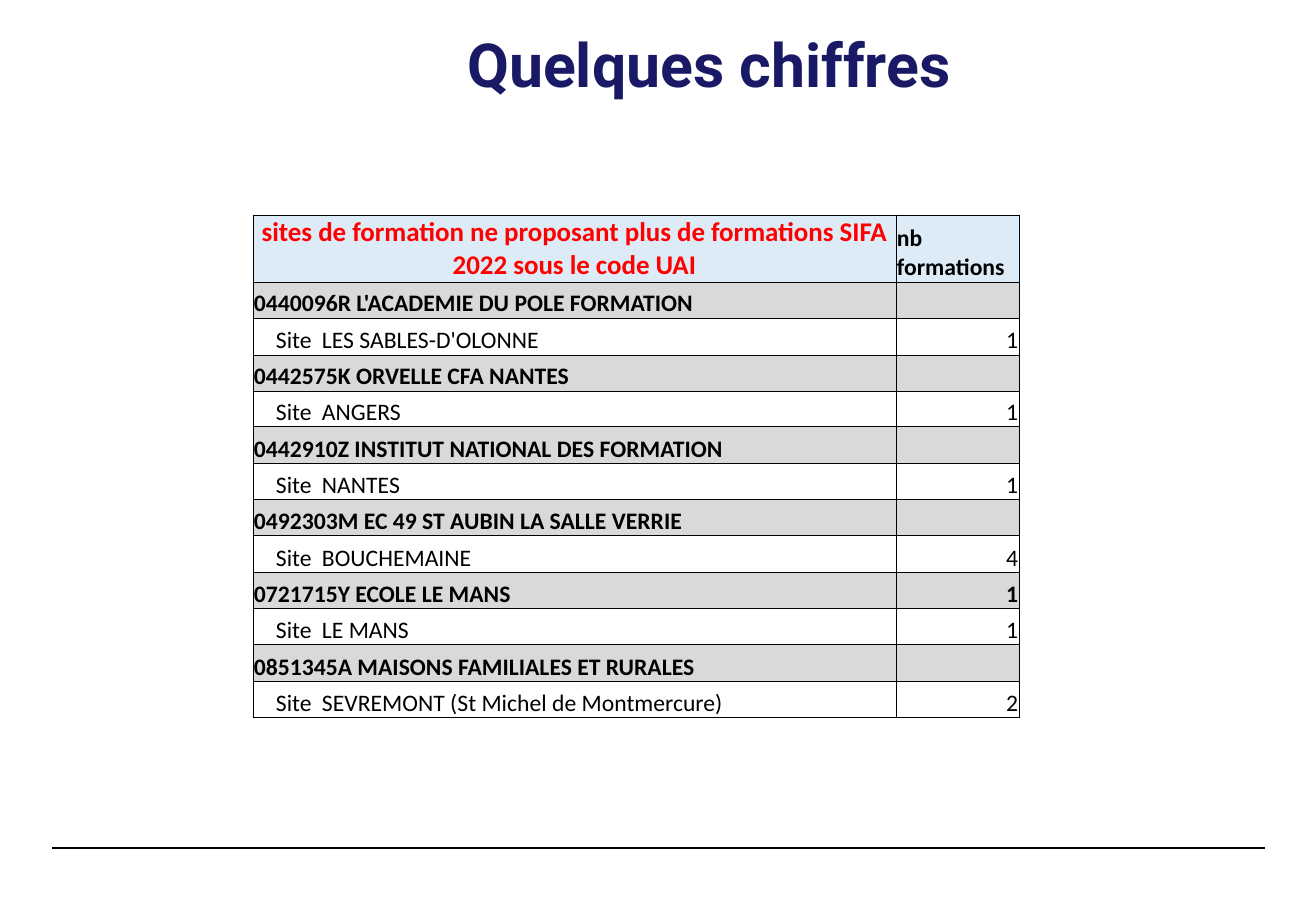
"""Build the slide "Quelques chiffres" with its table of training sites."""
from dataclasses import dataclass

from lxml import etree
from pptx import Presentation
from pptx.dml.color import RGBColor
from pptx.enum.shapes import MSO_CONNECTOR
from pptx.enum.text import MSO_ANCHOR, PP_ALIGN
from pptx.oxml.ns import qn
from pptx.util import Pt

STRAIGHT = MSO_CONNECTOR.STRAIGHT
TOP, BOTTOM = MSO_ANCHOR.TOP, MSO_ANCHOR.BOTTOM
LEFT, CENTER, RIGHT = PP_ALIGN.LEFT, PP_ALIGN.CENTER, PP_ALIGN.RIGHT
EMU_PER_PX = 7526


@dataclass(frozen=True)
class Theme:
    title_font: str = "Roboto"
    table_font: str = "Calibri"
    title_color: str = "191966"
    alert_color: str = "FF0000"
    ink: str = "000000"
    header_fill: str = "DDEBF7"
    group_fill: str = "D9D9D9"
    title_size: int = 36
    header_size: int = 16
    body_size: int = 14
    rule_width: float = 0.8
    border_width: float = 0.5


theme = Theme()


def px(length):
    return length * EMU_PER_PX


def add_run(paragraph, text, font, size, color, bold):
    run = paragraph.add_run()
    run.text = text
    run.font.name = font
    run.font.size = Pt(size)
    run.font.bold = bold
    run.font.color.rgb = RGBColor.from_string(color)


SITES = [
    ("0440096R L'ACADEMIE DU POLE FORMATION", "", "LES SABLES-D'OLONNE", "1"),
    ("0442575K ORVELLE CFA NANTES", "", "ANGERS", "1"),
    ("0442910Z INSTITUT NATIONAL DES FORMATION", "", "NANTES", "1"),
    ("0492303M EC 49 ST AUBIN LA SALLE VERRIE", "", "BOUCHEMAINE", "4"),
    ("0721715Y ECOLE LE MANS", "1", "LE MANS", "1"),
    ("0851345A MAISONS FAMILIALES ET RURALES", "", "SEVREMONT (St Michel de Montmercure)", "2"),
]
HEADER = ("sites de formation ne proposant plus de formations SIFA 2022 sous le code UAI", "nb formations")
COLUMN_WIDTHS = (643, 123)
HEADER_HEIGHT, BODY_HEIGHT = 67, 436
SITE_INDENT, SITE_TAB = 23, 46

presentation = Presentation()
presentation.slide_width = px(1316)
presentation.slide_height = px(911)
slide = presentation.slides.add_slide(presentation.slide_layouts[6])

footer_rule = slide.shapes.add_connector(STRAIGHT, px(52), px(848), px(1265), px(848))
footer_rule.line.color.rgb = RGBColor.from_string(theme.ink)
footer_rule.line.width = Pt(theme.rule_width)
etree.SubElement(footer_rule._element.spPr, qn("a:effectLst"))

title = slide.shapes.add_textbox(px(56), px(35), px(1306), px(143))
title_frame = title.text_frame
title_frame.word_wrap = True
title_frame.vertical_anchor = TOP
title_frame.margin_left = title_frame.margin_right = 0
title_frame.margin_top = title_frame.margin_bottom = 0
title_paragraph = title_frame.paragraphs[0]
title_paragraph.alignment = CENTER
title_paragraph.line_spacing = 0.9
add_run(title_paragraph, "Quelques chiffres", theme.title_font, theme.title_size, theme.title_color, True)

rows = [("header", HEADER)]
for group, group_count, site, site_count in SITES:
    rows.append(("group", (group, group_count)))
    rows.append(("site", (f"Site\t{site}", site_count)))
body_rows = len(rows) - 1
row_edges = [round(BODY_HEIGHT * index / body_rows) for index in range(body_rows + 1)]
row_heights = [HEADER_HEIGHT] + [end - start for start, end in zip(row_edges, row_edges[1:])]
fills = {"header": theme.header_fill, "group": theme.group_fill}

table = slide.shapes.add_table(
    len(rows), len(COLUMN_WIDTHS), px(253), px(215), px(sum(COLUMN_WIDTHS)), px(sum(row_heights))
).table
table.first_row = False
table.horz_banding = False
for column, width in zip(table.columns, COLUMN_WIDTHS):
    column.width = px(width)

for row_index, (kind, texts) in enumerate(rows):
    table.rows[row_index].height = px(row_heights[row_index])
    for column_index, text in enumerate(texts):
        cell = table.cell(row_index, column_index)
        is_site_name = kind == "site" and column_index == 0
        is_main_header = kind == "header" and column_index == 0
        cell.vertical_anchor = BOTTOM
        cell.margin_left = px(SITE_INDENT if is_site_name else 1)
        cell.margin_right = cell.margin_top = px(1)
        cell.margin_bottom = 0

        properties = cell._tc.get_or_add_tcPr()
        for side in ("a:lnL", "a:lnR", "a:lnT", "a:lnB"):
            border = etree.SubElement(properties, qn(side), w=str(Pt(theme.border_width)))
            border_fill = etree.SubElement(border, qn("a:solidFill"))
            etree.SubElement(border_fill, qn("a:srgbClr"), val=theme.ink)
        if kind in fills:
            cell.fill.solid()
            cell.fill.fore_color.rgb = RGBColor.from_string(fills[kind])
        else:
            cell.fill.background()

        paragraph = cell.text_frame.paragraphs[0]
        if is_main_header:
            paragraph.alignment = CENTER
        elif column_index == 1 and kind != "header":
            paragraph.alignment = RIGHT
        else:
            paragraph.alignment = LEFT
        if is_site_name:
            tabs = etree.SubElement(paragraph._p.get_or_add_pPr(), qn("a:tabLst"))
            etree.SubElement(tabs, qn("a:tab"), pos=str(px(SITE_TAB)), algn="l")
        if text:
            size = theme.header_size if is_main_header else theme.body_size
            color = theme.alert_color if is_main_header else theme.ink
            add_run(paragraph, text, theme.table_font, size, color, kind != "site")
        else:
            etree.SubElement(paragraph._p, qn("a:endParaRPr"), sz=str(theme.body_size * 100))

presentation.save("out.pptx")
